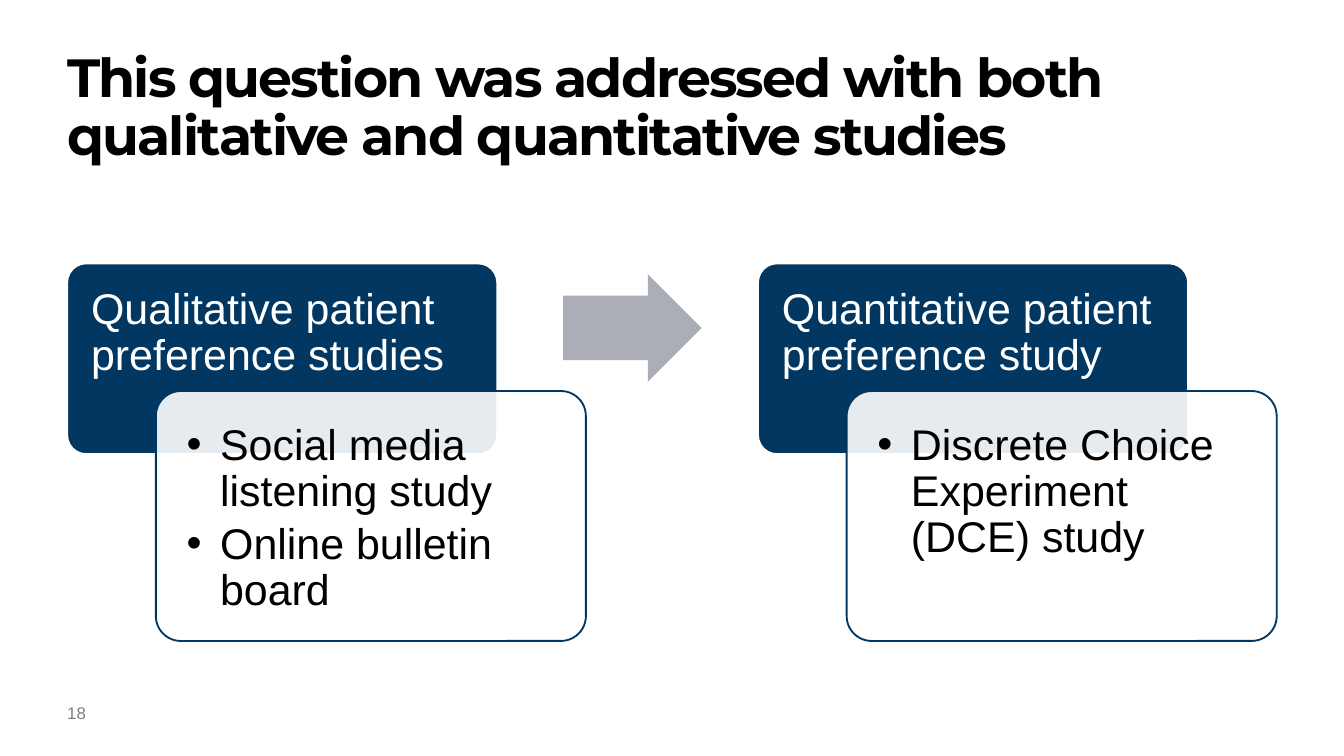
from lxml import etree
from pptx import Presentation
from pptx.dml.color import RGBColor
from pptx.enum import shapes, text
from pptx.oxml import ns
from pptx.util import Pt

NAVY = RGBColor(0x02, 0x37, 0x61)
GREY = RGBColor(0xAB, 0xAE, 0xB7)
DIM = RGBColor(0x7F, 0x7F, 0x7F)
WHITE = RGBColor(0xFF, 0xFF, 0xFF)
BLACK = RGBColor(0, 0, 0)

KIND = shapes.MSO_SHAPE
LEFT = 36
STEP = 370.1
STAGES = [
    ("Qualitative patient preference studies",
     ["Social media listening study", "Online bulletin board"]),
    ("Quantitative patient preference study",
     ["Discrete Choice Experiment (DCE) study"]),
]


def place(shape, box):
    shape.left, shape.top, shape.width, shape.height = map(Pt, box)


def write(shape, lines, size=23, font="Arial", color=BLACK, bold=False,
          inset=(0, 0, 0, 0), line=0.9, after=0, bullet=False, track=0):
    frame = shape.text_frame
    frame.word_wrap = True
    frame.auto_size = text.MSO_AUTO_SIZE.NONE
    frame.vertical_anchor = text.MSO_ANCHOR.TOP
    (frame.margin_left, frame.margin_top,
     frame.margin_right, frame.margin_bottom) = map(Pt, inset)
    for i, words in enumerate(lines):
        para = frame.paragraphs[0] if i == 0 else frame.add_paragraph()
        run = para.add_run()
        run.text = words
        para.alignment = text.PP_ALIGN.LEFT
        para.line_spacing = line
        para.space_before = Pt(0)
        para.space_after = Pt(after)
        if bullet:
            props = para._p.get_or_add_pPr()
            props.set("marL", str(Pt(18)))
            props.set("indent", str(-Pt(18)))
            etree.SubElement(props, ns.qn("a:buChar"), char="•")
        run.font.size = Pt(size)
        run.font.name = font
        run.font.bold = bold
        run.font.color.rgb = color
        if track:
            run._r.get_or_add_rPr().set("spc", str(track * 100))


def label(slide, words, box, **style):
    frame = slide.shapes.add_textbox(*map(Pt, box))
    write(frame, [words], **style)


def block(slide, kind, box, fill, adjust, edge=None, alpha=None):
    shape = slide.shapes.add_shape(kind, *map(Pt, box))
    shape.shadow.inherit = False
    for i, value in enumerate(adjust):
        shape.adjustments[i] = value
    shape.fill.solid()
    shape.fill.fore_color.rgb = fill
    if alpha:
        tint = shape._element.spPr.find(".//" + ns.qn("a:srgbClr"))
        etree.SubElement(tint, ns.qn("a:alpha"), val=str(alpha * 1000))
    if edge is None:
        shape.line.fill.background()
    else:
        shape.line.color.rgb = edge
        shape.line.width = Pt(1)


def stage(slide, left, name, items, body):
    block(slide, KIND.ROUNDED_RECTANGLE, (left, 141.1, 230.4, 102.2),
          NAVY, [0.1], WHITE)
    label(slide, name, (left, 141.1, 230.4, 68.4), color=WHITE,
          inset=(12.8, 12.8, 12.8, 7), after=8)
    block(slide, KIND.ROUNDED_RECTANGLE, (left + 47.5, 209.5, 230.4, 133.9),
          WHITE, [0.1], NAVY, 90)
    place(body, (left + 51.1, 213.8, 222.5, 126))
    write(body, items, inset=[12.8] * 4, after=3.5, bullet=True)
    slide.shapes._spTree.append(body._element)


def main():
    deck = Presentation()
    deck.slide_width, deck.slide_height = Pt(720), Pt(405)
    slide = deck.slides.add_slide(deck.slide_layouts[3])
    title, *bodies = slide.placeholders
    place(title, (LEFT, 27.4, 648, 75.6))
    write(title, ["This question was addressed with both qualitative and "
                  "quantitative studies"],
          size=28.8, font="Montserrat", bold=True, track=-1)
    label(slide, "18", (LEFT, 376.6, 18, 18), size=9, color=DIM, line=1)
    for i, ((name, items), body) in enumerate(zip(STAGES, bodies)):
        stage(slide, LEFT + i * STEP, name, items, body)
    block(slide, KIND.RIGHT_ARROW, (301.7, 146.9, 74.2, 57.6),
          GREY, [0.6, 0.5])
    deck.save("out.pptx")


if __name__ == "__main__":
    main()
